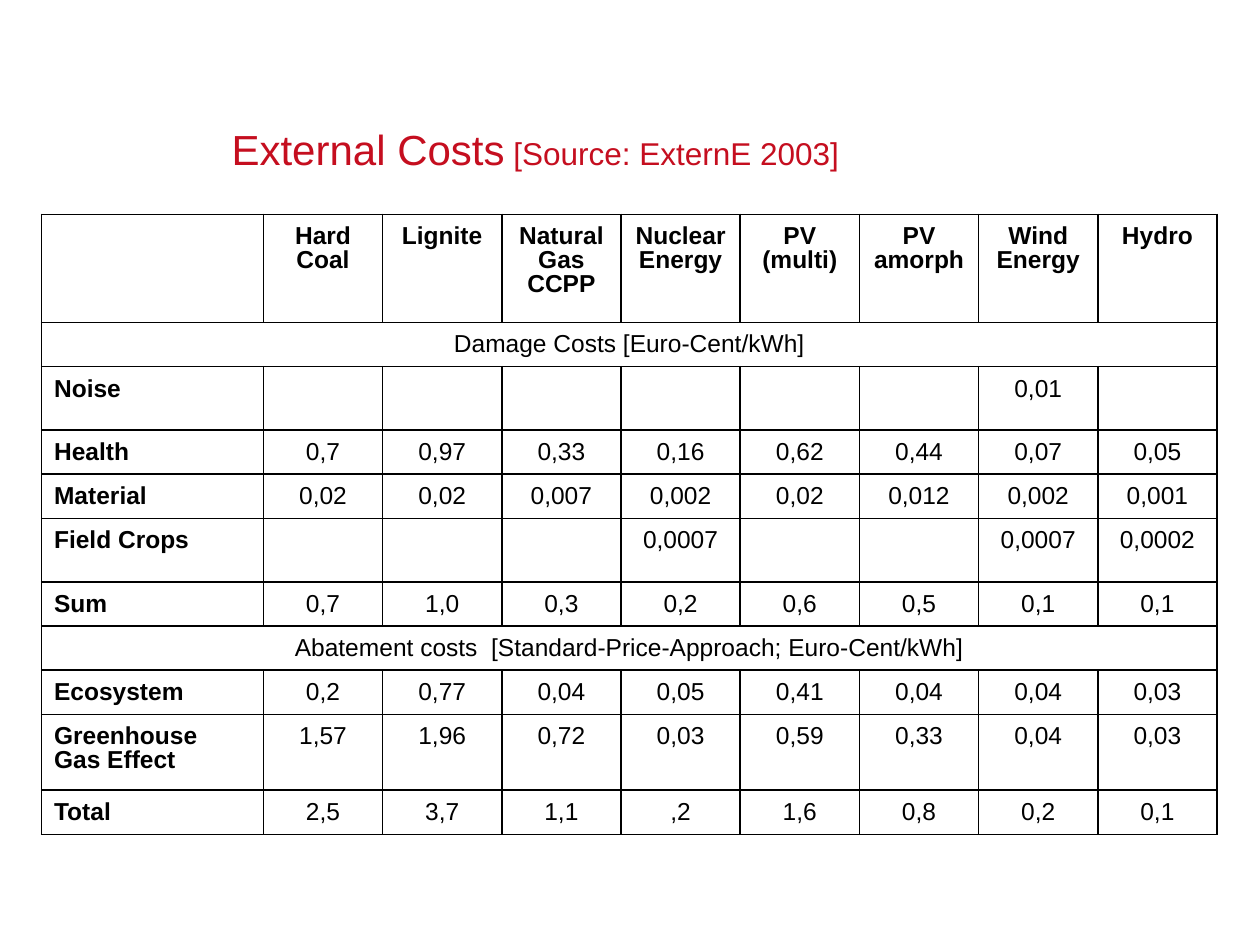
from dataclasses import dataclass

import pptx
import pptx.dml.color
import pptx.enum.text
import pptx.oxml
import pptx.oxml.ns
import pptx.table
import pptx.text.text
import pptx.util
from pptx.util import Cm

RED = pptx.dml.color.RGBColor(0xC5, 0x0E, 0x1F)
BLACK = pptx.dml.color.RGBColor(0, 0, 0)
FONT = "Arial"
LEFT, TOP, WIDTH = 0.84, 4.32, 23.7
HEAD_COL = 4.47


@dataclass
class Row:
    head: str
    vals: str = ""  # cells parted by "|"; none at all makes a band
    high: float = 0.89
    bold: bool = False


ROWS = [
    Row("", "Hard Coal|Lignite|Natural Gas CCPP|Nuclear Energy|PV (multi)|"
        "PV amorph|Wind Energy|Hydro", 2.18, True),
    Row("Damage Costs [Euro-Cent/kWh]"),
    Row("Noise", "||||||0,01|", 1.28),
    Row("Health", "0,7|0,97|0,33|0,16|0,62|0,44|0,07|0,05"),
    Row("Material", "0,02|0,02|0,007|0,002|0,02|0,012|0,002|0,001"),
    Row("Field Crops", "|||0,0007|||0,0007|0,0002", 1.28),
    Row("Sum", "0,7|1,0|0,3|0,2|0,6|0,5|0,1|0,1"),
    Row("Abatement costs  [Standard-Price-Approach; Euro-Cent/kWh]"),
    Row("Ecosystem", "0,2|0,77|0,04|0,05|0,41|0,04|0,04|0,03"),
    Row("Greenhouse\nGas Effect", "1,57|1,96|0,72|0,03|0,59|0,33|0,04|0,03", 1.53),
    Row("Total", "2,5|3,7|1,1|,2|1,6|0,8|0,2|0,1"),
]


def add_run(para: pptx.text.text._Paragraph, text: str, size: int,
            color: pptx.dml.color.RGBColor, bold: bool = False) -> None:
    run = para.add_run()
    run.text = text
    run.font.name = FONT
    run.font.size = pptx.util.Pt(size)
    run.font.bold = bold
    run.font.color.rgb = color


def frame(cell: pptx.table._Cell) -> None:
    """Give a cell thin black borders and no fill."""
    props = cell._tc.get_or_add_tcPr()
    for side in ("lnL", "lnR", "lnT", "lnB"):
        props.append(pptx.oxml.parse_xml(
            f'<a:{side} {pptx.oxml.ns.nsdecls("a")} w="12700">'
            f'<a:solidFill><a:srgbClr val="{BLACK}"/></a:solidFill></a:{side}>'))
    cell.fill.background()


def write(cell: pptx.table._Cell, text: str, bold: bool, mid: bool) -> None:
    if not text:
        return
    cell.margin_left = cell.margin_right = Cm(0.25)
    cell.margin_top, cell.margin_bottom = Cm(0.23), Cm(0.13)
    para = cell.text_frame.paragraphs[0]
    para.line_spacing = 0.87
    align = pptx.enum.text.PP_ALIGN
    para.alignment = align.CENTER if mid else align.LEFT
    for i, line in enumerate(text.split("\n")):
        if i:
            para.add_line_break()
        add_run(para, line, 14, BLACK, bold)


def main() -> None:
    deck = pptx.Presentation()
    deck.slide_width, deck.slide_height = Cm(25.4), Cm(19.05)
    slide = deck.slides.add_slide(deck.slide_layouts[6])

    # Title
    box = slide.shapes.add_textbox(Cm(4.67), Cm(1.07), Cm(19.43), Cm(2.44))
    text = box.text_frame
    text.word_wrap = True
    text.vertical_anchor = pptx.enum.text.MSO_ANCHOR.BOTTOM
    text.margin_left = text.margin_right = text.margin_top = text.margin_bottom = 0
    para = text.paragraphs[0]
    para.line_spacing = pptx.util.Pt(30)
    add_run(para, "External Costs", 24, RED)
    add_run(para, " [Source: ExternE 2003]", 18, RED)

    # Cost table
    count = len(ROWS[0].vals.split("|"))
    table = slide.shapes.add_table(
        len(ROWS), count + 1, Cm(LEFT), Cm(TOP), Cm(WIDTH),
        Cm(sum(row.high for row in ROWS))).table
    table.first_row = table.horz_banding = False
    for i, col in enumerate(table.columns):
        col.width = Cm((WIDTH - HEAD_COL) / count if i else HEAD_COL)
    for i, row in enumerate(ROWS):
        table.rows[i].height = Cm(row.high)
        for j in range(count + 1):
            frame(table.cell(i, j))
        head = table.cell(i, 0)
        if not row.vals:
            head.merge(table.cell(i, count))
            write(head, row.head, False, True)
            continue
        write(head, row.head, True, False)
        for j, val in enumerate(row.vals.split("|"), 1):
            write(table.cell(i, j), val, row.bold, True)

    deck.save("out.pptx")


if __name__ == "__main__":
    main()
